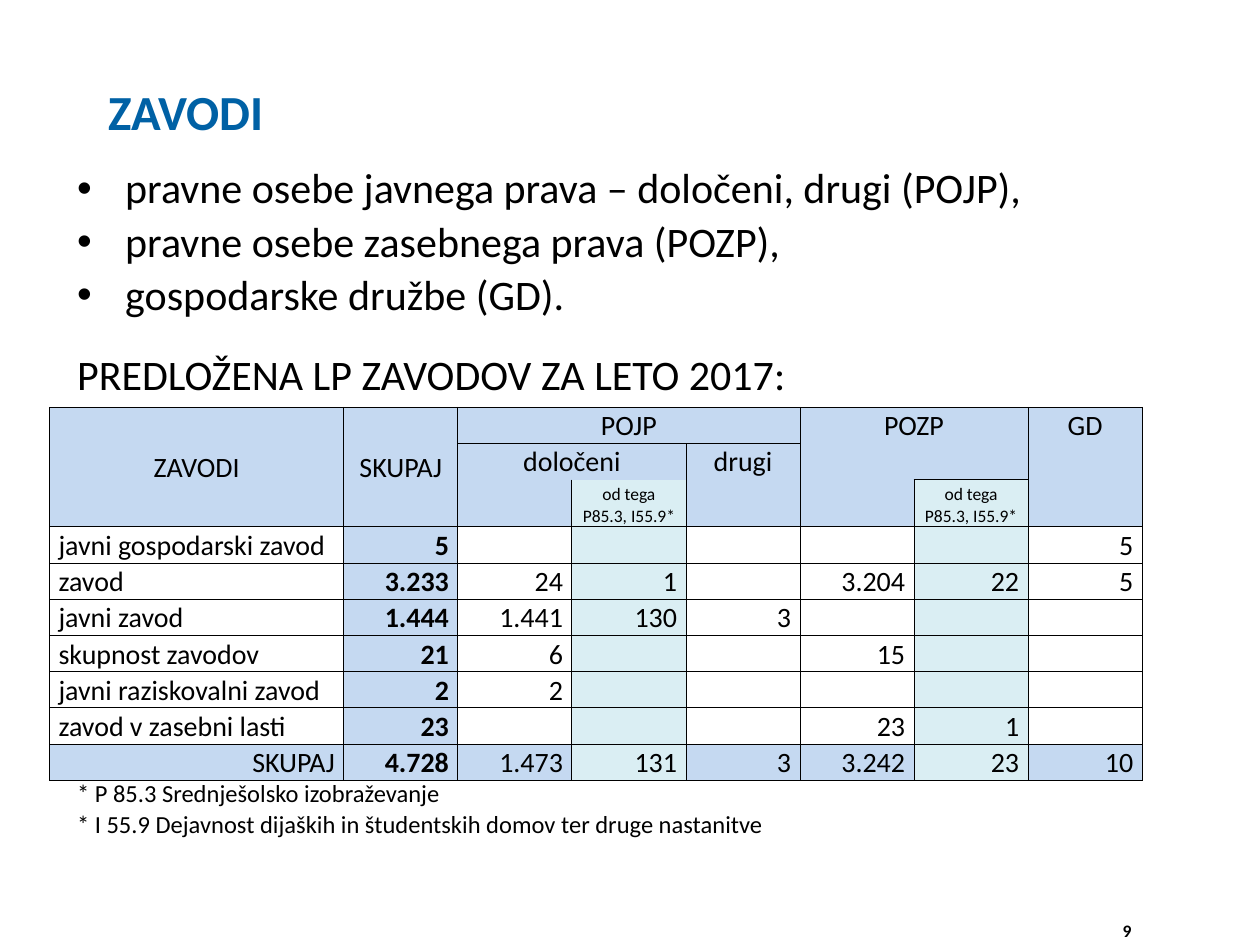
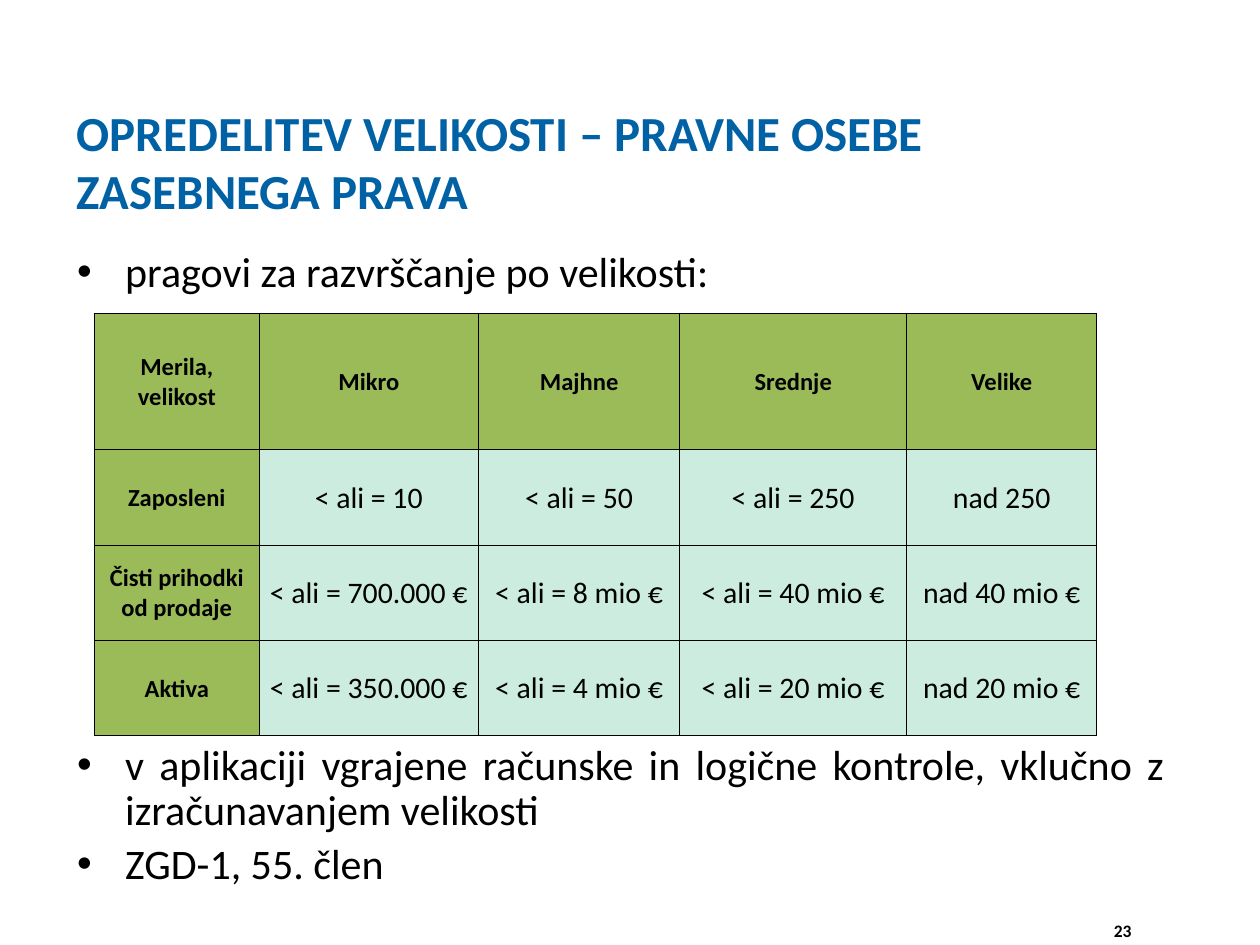
from lxml.etree import SubElement
from pptx import Presentation
from pptx.dml.color import RGBColor
from pptx.enum.text import MSO_ANCHOR as Anchor, MSO_AUTO_SIZE as AutoSize, PP_ALIGN as Align
from pptx.oxml.ns import qn
from pptx.util import Cm, Pt

FONT = "Calibri"
BLACK, TITLE_BLUE = "000000", "0061A5"
BLUE, PALE_BLUE = "C5D9F1", "DAEEF3"
GREEN, MINT = "9BBB59", "CBECDE"
BULLET_INDENT, LINE_GAP = Cm(0.97), 4.5
THIN, PAD = Cm(0.03), Cm(0.18)

OF_WHICH = "od tega\vP85.3, I55.9*"
INSTITUTES = [
    ["ZAVODI", "SKUPAJ", "POJP", "", "", "POZP", "", "GD"],
    ["", "", "določeni", "", "drugi", "", "", ""],
    ["", "", "", OF_WHICH, "", "", OF_WHICH, ""],
    ["javni gospodarski zavod", "5", "", "", "", "", "", "5"],
    ["zavod", "3.233", "24", "1", "", "3.204", "22", "5"],
    ["javni zavod", "1.444", "1.441", "130", "3", "", "", ""],
    ["skupnost zavodov", "21", "6", "", "", "15", "", ""],
    ["javni raziskovalni zavod", "2", "2", "", "", "", "", ""],
    ["zavod v zasebni lasti", "23", "", "", "", "23", "1", ""],
    ["SKUPAJ", "4.728", "1.473", "131", "3", "3.242", "23", "10"],
]
INSTITUTE_MERGES = [(0, 0, 2, 0), (0, 1, 2, 1), (0, 2, 0, 4), (0, 5, 0, 6), (1, 2, 1, 3)]
HEADER_SIDES = {
    (0, 5): "LTR", (0, 6): "TR", (0, 7): "LTR",
    (1, 2): "LTR", (1, 3): "TR", (1, 4): "LTR", (1, 5): "L", (1, 6): "RB", (1, 7): "LR",
    (2, 2): "LRB", (2, 3): "LRB", (2, 4): "LRB", (2, 5): "LRB", (2, 7): "LRB",
}
SIZES = [
    ["Merila,\vvelikost", "Mikro", "Majhne", "Srednje", "Velike"],
    ["Zaposleni", "< ali = 10", "< ali = 50", "< ali = 250", "nad 250"],
    ["Čisti prihodki od prodaje", "< ali = 700.000 €", "< ali = 8 mio €",
     "< ali = 40 mio €", "nad 40 mio €"],
    ["Aktiva", "< ali = 350.000 €", "< ali = 4 mio €", "< ali = 20 mio €", "nad 20 mio €"],
]


def institute_style(r, c):
    header, total = r < 3, r == len(INSTITUTES) - 1
    of_which = c in (3, 6) and r >= 2
    shaded = header or total or c == 1
    label = c == 0 and not header and not total
    return dict(
        fill=PALE_BLUE if of_which else BLUE if shaded else None,
        size=10 if r == 2 else 16,
        bold=c == 1 and not header,
        align=Align.CENTER if header else Align.LEFT if label else Align.RIGHT,
        anchor=Anchor.MIDDLE if r < 2 else Anchor.BOTTOM,
        left=PAD if label else THIN,
        right=THIN if header or label else PAD,
        sides=HEADER_SIDES.get((r, c), "LTRB"),
    )


def size_style(r, c):
    header = r == 0 or c == 0
    return dict(fill=GREEN if header else MINT, size=14 if header else 17, bold=header)


# fields: text, size, space before, bullet
SLIDES = [
    dict(
        number="9", title="ZAVODI", title_box=(1.5, 1.52, 21.21, 1.8), title_margin=0.69,
        body_box=(1.3, 3.25, 23.9, 14.88),
        body=[
            ("pravne osebe javnega prava – določeni, drugi (POJP),", 24, 0, True),
            ("pravne osebe zasebnega prava (POZP),", 24, LINE_GAP, True),
            ("gospodarske družbe (GD).", 24, LINE_GAP, True),
            ("PREDLOŽENA LP ZAVODOV ZA LETO 2017:", 24, 20, False),
            ("* P 85.3 Srednješolsko izobraževanje", 14, 218, False),
            ("* I 55.9 Dejavnost dijaških in študentskih domov ter druge nastanitve", 14, 2.8, False),
        ],
        table=dict(at=(1, 8.21), cols=[5.93] + [2.3] * 7,
                   rows=[0.73] * 2 + [0.95] + [0.73] * 7,
                   data=INSTITUTES, style=institute_style, merges=INSTITUTE_MERGES),
    ),
    dict(
        number="23", title="OPREDELITEV VELIKOSTI – PRAVNE OSEBE ZASEBNEGA PRAVA",
        title_box=(1.3, 1.93, 20.4, 3), title_margin=0.25,
        body_box=(1.3, 4.93, 22.43, 13.49),
        body=[
            ("pragovi za razvrščanje po velikosti:", 24, 0, True),
            ("v aplikaciji vgrajene računske in logične kontrole, vklučno z "
             "izračunavanjem velikosti", 24, 256, True),
            ("ZGD-1, 55. člen", 24, LINE_GAP, True),
        ],
        table=dict(at=(1.91, 6.31), cols=[3.31, 4.43, 4.05, 4.58, 3.83],
                   rows=[2.76] + [1.92] * 3, data=SIZES, style=size_style, merges=[]),
    ),
]


def rgb(value):
    return RGBColor.from_string(value)


def format_runs(p, size, color=BLACK, bold=False):
    for r in p.runs:
        r.font.name, r.font.size, r.font.bold = FONT, Pt(size), bold
        r.font.color.rgb = rgb(color)


def place(s, box):
    s.left, s.top, s.width, s.height = map(Cm, box)


def add_title(slide, text, box, margin):
    s = slide.shapes.title
    place(s, box)
    tf = s.text_frame
    tf.text = text
    tf.word_wrap, tf.auto_size, tf.vertical_anchor = True, AutoSize.NONE, Anchor.TOP
    tf.margin_left = Cm(margin)
    p = tf.paragraphs[0]
    p.alignment = Align.LEFT
    format_runs(p, 28, TITLE_BLUE, True)


def add_body(slide, items, box):
    s = slide.placeholders[1]
    place(s, box)
    tf = s.text_frame
    tf.text = "\n".join(item[0] for item in items)
    tf.word_wrap, tf.auto_size, tf.vertical_anchor = True, AutoSize.NONE, Anchor.TOP
    for p, (_, size, before, bullet) in zip(tf.paragraphs, items):
        p.alignment, p.line_spacing, p.space_before = Align.JUSTIFY, 0.9, Pt(before)
        pPr = p._p.get_or_add_pPr()
        indent = BULLET_INDENT if bullet else 0
        pPr.set("marL", str(indent))
        pPr.set("indent", str(-indent))
        if bullet:
            SubElement(pPr, qn("a:buFont"), typeface="Arial")
            SubElement(pPr, qn("a:buChar"), char="•")
        else:
            SubElement(pPr, qn("a:buNone"))
        format_runs(p, size)


def add_number(slide, number):
    s = slide.shapes.add_textbox(Cm(19.25), Cm(18.42), Cm(3.81), Cm(0.63))
    tf = s.text_frame
    tf.text, tf.word_wrap = number, True
    p = tf.paragraphs[0]
    p.alignment = Align.RIGHT
    format_runs(p, 10, bold=True)


def set_borders(cell, sides):
    tcPr = cell._tc.get_or_add_tcPr()
    for side in "LRTB":
        ln = SubElement(tcPr, qn(f"a:ln{side}"), w=str(Pt(0.5)))
        if side in sides:
            fill = SubElement(ln, qn("a:solidFill"))
            SubElement(fill, qn("a:srgbClr"), val=BLACK)
        else:
            SubElement(ln, qn("a:noFill"))


def fill_cell(cell, text, fill, size, bold, align=Align.CENTER, anchor=Anchor.MIDDLE,
              left=THIN, right=THIN, sides="LTRB"):
    set_borders(cell, sides)
    if fill:
        cell.fill.solid()
        cell.fill.fore_color.rgb = rgb(fill)
    else:
        cell.fill.background()
    cell.margin_left, cell.margin_right, cell.margin_top, cell.margin_bottom = left, right, THIN, 0
    cell.vertical_anchor = anchor
    p = cell.text_frame.paragraphs[0]
    p.text, p.alignment = text, align
    format_runs(p, size, bold=bold)
    if not text:
        SubElement(p._p, qn("a:endParaRPr"), sz=str(size * 100))


def add_table(slide, at, cols, rows, data, style, merges):
    x, y = at
    box = map(Cm, (x, y, sum(cols), sum(rows)))
    table = slide.shapes.add_table(len(rows), len(cols), *box).table
    table.first_row = table.horz_banding = False
    for col, width in zip(table.columns, cols):
        col.width = Cm(width)
    for row, height in zip(table.rows, rows):
        row.height = Cm(height)
    for r, values in enumerate(data):
        for c, text in enumerate(values):
            fill_cell(table.cell(r, c), text, **style(r, c))
    for top, left, bottom, right in merges:
        table.cell(top, left).merge(table.cell(bottom, right))


def main():
    prs = Presentation()
    prs.slide_width, prs.slide_height = Cm(25.4), Cm(19.05)
    for spec_data in SLIDES:
        slide = prs.slides.add_slide(prs.slide_layouts[1])
        add_title(slide, spec_data["title"], spec_data["title_box"], spec_data["title_margin"])
        add_body(slide, spec_data["body"], spec_data["body_box"])
        add_number(slide, spec_data["number"])
        add_table(slide, **spec_data["table"])
    prs.save("out.pptx")


if __name__ == "__main__":
    main()
